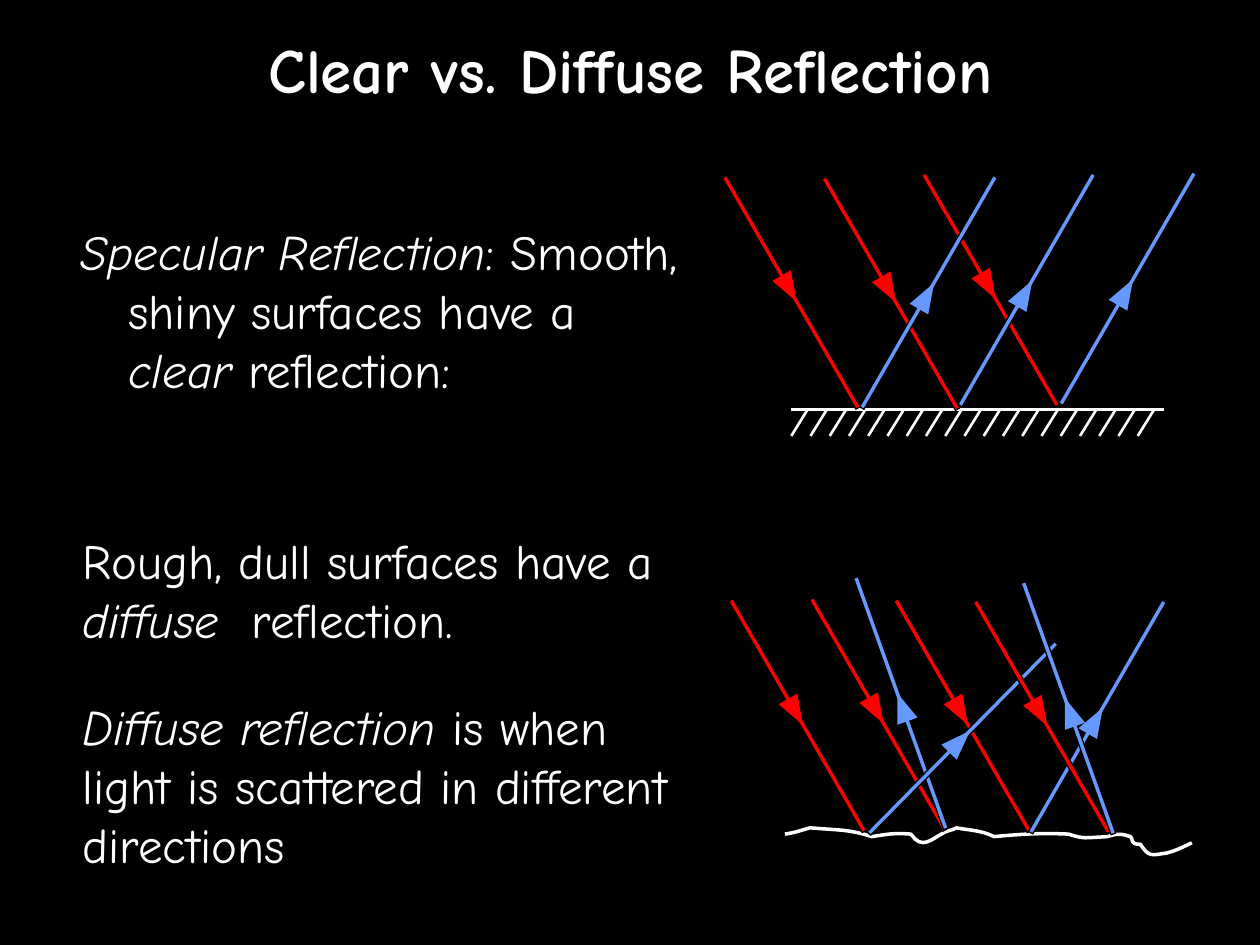
import math

import lxml.etree
import pptx
import pptx.dml.color
import pptx.enum.shapes
import pptx.enum.text
import pptx.oxml.ns
import pptx.util

BLACK = pptx.dml.color.RGBColor(0x00, 0x00, 0x00)
WHITE = pptx.dml.color.RGBColor(0xFF, 0xFF, 0xFF)
RED = pptx.dml.color.RGBColor(0xFF, 0x00, 0x00)
BLUE = pptx.dml.color.RGBColor(0x66, 0x99, 0xFF)
SHAPES = pptx.enum.shapes.MSO_SHAPE
ALIGN = pptx.enum.text.PP_ALIGN
ANCHOR = pptx.enum.text.MSO_ANCHOR


def px(length):
    return pptx.util.Emu(round(length * 9144))


def write_text(paragraphs, box, size=28, bold=False, align=ALIGN.LEFT,
               anchor=ANCHOR.TOP, hanging=0, gap=0):
    frame = slide.shapes.add_textbox(*map(px, box)).text_frame
    frame.word_wrap = True
    frame.vertical_anchor = anchor
    for index, runs in enumerate(paragraphs):
        paragraph = frame.add_paragraph() if index else frame.paragraphs[0]
        paragraph.alignment = align
        paragraph.space_before = pptx.util.Pt(gap if index else 0)
        if hanging:
            properties = paragraph._p.get_or_add_pPr()
            properties.set("marL", str(px(hanging)))
            properties.set("indent", str(px(-hanging)))
        for words, italic in runs:
            run = paragraph.add_run()
            run.text = words
            run.font.name = "Comic Neue"
            run.font.size = pptx.util.Pt(size)
            run.font.bold = bold
            run.font.italic = italic
            run.font.color.rgb = WHITE


presentation = pptx.Presentation()
presentation.slide_width = px(1000)
presentation.slide_height = px(750)
slide = presentation.slides.add_slide(presentation.slide_layouts[6])
slide.background.fill.solid()
slide.background.fill.fore_color.rgb = BLACK

write_text([[("Clear vs. Diffuse Reflection", False)]], (42, 14, 917, 81),
           size=36, bold=True, align=ALIGN.CENTER, anchor=ANCHOR.MIDDLE)
write_text([[("Specular Reflection", True),
             (": Smooth, shiny surfaces have a ", False),
             ("clear", True), (" reflection:", False)]],
           (54, 171, 502, 183), hanging=38)
write_text([[("Rough, dull surfaces have a ", False),
             ("diffuse ", True), (" reflection.", False)],
            [("Diffuse reflection", True),
             (" is when light is scattered in different directions", False)]],
           (56, 416, 502, 287), gap=28)

mirror_lines = [(628, 325, 924, 325, 2)]
for index in range(19):
    top = 641 + index * 275 / 18
    mirror_lines.append((top, 325, top - 13, 346, 1.5))
for *ends, width in mirror_lines:
    stroke = slide.shapes.add_connector(
        pptx.enum.shapes.MSO_CONNECTOR.STRAIGHT, *map(px, ends))
    stroke.line.color.rgb = WHITE
    stroke.line.width = pptx.util.Pt(width)
    lxml.etree.SubElement(stroke._element.spPr, pptx.oxml.ns.qn("a:effectLst"))

rough_start = (623, 662)
rough_curves = [
    ((630, 661), (636, 659), (643, 657)), ((665, 659), (674, 658), (692, 664)),
    ((705, 662), (709, 661), (723, 662)), ((732, 675), (739, 666), (749, 661)),
    ((752, 659), (756, 659), (759, 657)), ((770, 659), (779, 659), (789, 664)),
    ((811, 662), (825, 661), (848, 662)), ((861, 666), (860, 665), (879, 664)),
    ((885, 662), (889, 661), (897, 664)), ((899, 665), (898, 668), (900, 669)),
    ((901, 670), (903, 670), (905, 670)), ((912, 680), (913, 679), (926, 677)),
    ((934, 675), (939, 672), (946, 669)),
]
rough_points = []
curve_start = rough_start
for curve in rough_curves:
    controls = (curve_start, *curve)
    for step in range(1, 9):
        t = step / 8
        weights = [math.comb(3, k) * t**k * (1 - t)**(3 - k) for k in range(4)]
        rough_points.append(tuple(
            px(sum(w * c[axis] for w, c in zip(weights, controls)))
            for axis in (0, 1)))
    curve_start = curve[-1]
outline = slide.shapes.build_freeform(*map(px, rough_start), scale=1)
outline.add_line_segments(rough_points, close=False)
rough_surface = outline.convert_to_shape()
rough_surface.shadow.inherit = False
rough_surface.fill.background()
rough_surface.line.color.rgb = WHITE
rough_surface.line.width = pptx.util.Pt(2)

rays = [
    (628, 232, 60, RED), (707, 233, 60, RED), (786, 230, 60, RED),
    (737, 232, 300, BLUE), (815, 230, 300, BLUE), (895, 229, 300, BLUE),
    (697, 567, 60, RED), (764, 568, 60, RED), (633, 568, 60, RED),
    (715, 558, 250.3, BLUE), (871, 569, 300, BLUE), (764, 586, 314.6, BLUE),
    (827, 569, 60, RED), (848, 562, 250.3, BLUE),
]
for center_x, center_y, angle, color in rays:
    direction = math.radians(angle)
    for preset, width, height, setback in (
            (SHAPES.RECTANGLE, 212, 4, 0), (SHAPES.RIGHT_ARROW, 87, 17, 35)):
        left = center_x - setback * math.cos(direction) - width / 2
        top = center_y - setback * math.sin(direction) - height / 2
        ray = slide.shapes.add_shape(preset, px(left), px(top), px(width), px(height))
        ray.rotation = angle
        ray.shadow.inherit = False
        ray.fill.solid()
        ray.fill.fore_color.rgb = color
        if preset == SHAPES.RIGHT_ARROW:
            ray.adjustments[0] = 0.04
            ray.adjustments[1] = 1.4
            ray.line.fill.background()
        else:
            ray.line.color.rgb = BLACK
            ray.line.width = pptx.util.Pt(0.75)

presentation.save("out.pptx")
